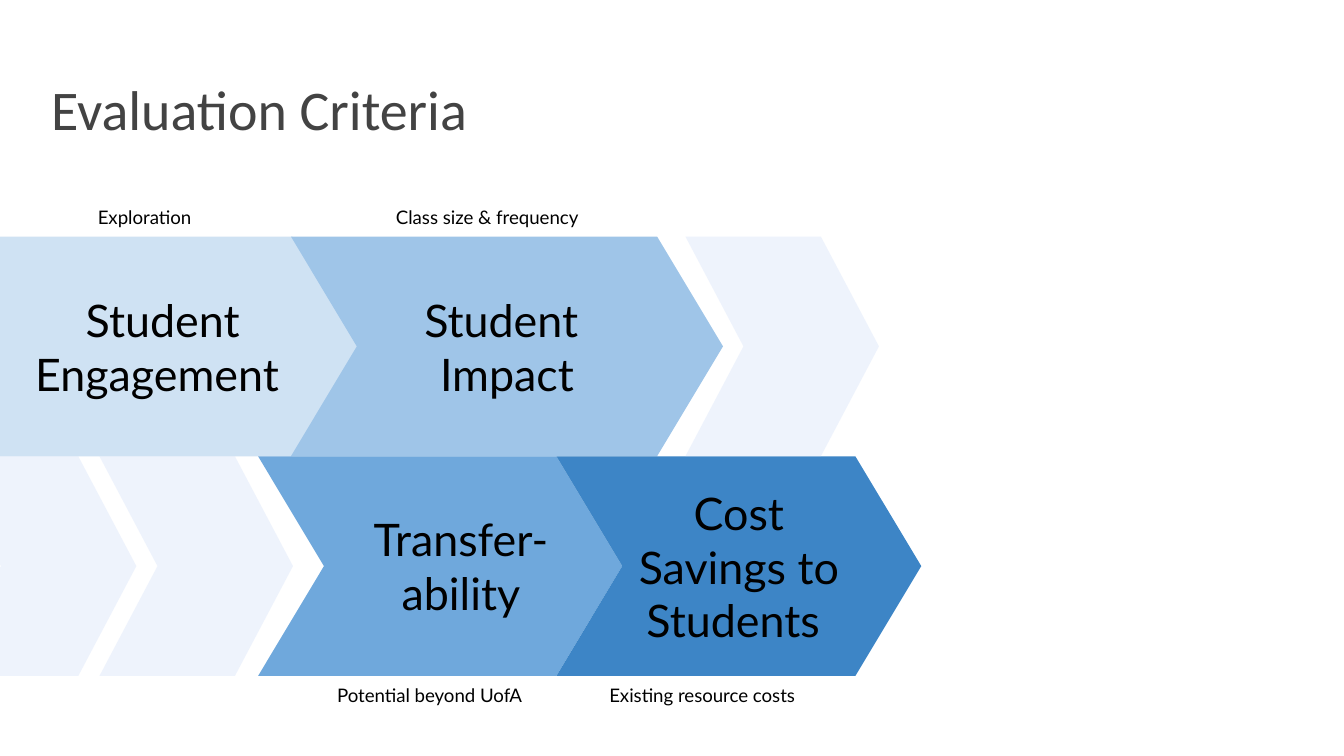
"""Build the evaluation criteria slide with two rows of chevrons."""
from lxml import etree
from pptx import Presentation
from pptx.dml.color import RGBColor
from pptx.enum.shapes import MSO_SHAPE
from pptx.enum.text import MSO_ANCHOR, PP_ALIGN
from pptx.oxml.ns import qn
from pptx.util import Pt

PX = 4572
PENTAGON, CHEVRON = MSO_SHAPE.PENTAGON, MSO_SHAPE.CHEVRON
MIDDLE = MSO_ANCHOR.MIDDLE
LEFT, CENTER = PP_ALIGN.LEFT, PP_ALIGN.CENTER

BLACK = RGBColor(0x00, 0x00, 0x00)
GRAY = RGBColor(0x43, 0x43, 0x43)
PALE = RGBColor(0xCF, 0xE2, 0xF3)
LIGHT = RGBColor(0x9F, 0xC5, 0xE8)
MEDIUM = RGBColor(0x6F, 0xA8, 0xDC)
DEEP = RGBColor(0x3D, 0x85, 0xC6)
GHOST = RGBColor(0xC9, 0xDA, 0xF8)

TOP, HIGH = 352, 327
LOW = TOP + HIGH
NOTE = 152
PAD = 20


def px(*sizes):
    """Turn px lengths into EMU."""
    return [size * PX for size in sizes]


def write(shape, text, size, color=BLACK, font="Lato", align=CENTER,
          inset=PAD, space=None):
    """Fill the text frame of a shape."""
    frame = shape.text_frame
    frame.word_wrap = True
    frame.vertical_anchor = MIDDLE
    frame.margin_left, frame.margin_right = px(inset, PAD)
    frame.margin_top, frame.margin_bottom = px(PAD, PAD)
    frame.text = text
    for para in frame.paragraphs:
        para.alignment = align
        para.line_spacing = space
        para.font.size = Pt(size)
        para.font.name = font
        para.font.color.rgb = color


def add_text(slide, box, text, size, **style):
    """Add a text box."""
    write(slide.shapes.add_textbox(*px(*box)), text, size, **style)


def add_note(slide, left, top, width, text, align):
    """Add a small caption above or below an arrow."""
    add_text(slide, (left, top, width, NOTE), text, 10, align=align, space=1.15)


def add_arrow(slide, left, top, width, color, text="", kind=CHEVRON):
    """Add a flat arrow shape with an optional label."""
    shape = slide.shapes.add_shape(kind, *px(left, top, width, HIGH))
    shape.adjustments[0] = 0.3
    shape.shadow.inherit = False
    shape.fill.solid()
    shape.fill.fore_color.rgb = color
    shape.line.fill.background()
    if text:
        write(shape, text, 24)
    return shape


def add_ghost(slide, left, top):
    """Add a see-through chevron."""
    shape = add_arrow(slide, left, top, 288, GHOST)
    color = next(shape.element.spPr.iter(qn("a:srgbClr")))
    etree.SubElement(color, qn("a:alpha")).set("val", "31000")


def main():
    """Build and save the slide."""
    deck = Presentation()
    deck.slide_width, deck.slide_height = px(2000, 1125)
    slide = deck.slides.add_slide(deck.slide_layouts[6])

    add_text(slide, (18, 53, 1544, 216), "Evaluation Criteria", 30,
             color=GRAY, font="Calibri", align=LEFT, inset=58)

    add_arrow(slide, 0, TOP, 533, PALE, "Student Engagement ", PENTAGON)
    add_arrow(slide, 433, TOP, 643, LIGHT, "Student \nImpact")
    add_arrow(slide, 384, LOW, 542, MEDIUM)
    add_arrow(slide, 828, LOW, 543, DEEP, "Cost Savings to Students ")
    add_text(slide, (482, 712, 408, 260), "Transfer-\vability", 24)

    for note in (
        (472, 244, 506, "Class size & frequency", CENTER),
        (482, 956, 336, "Potential beyond UofA", LEFT),
        (887, 956, 598, "Existing resource costs", LEFT),
        (0, 244, 430, "Exploration", CENTER),
    ):
        add_note(slide, *note)

    for left, top in ((148, LOW), (-85, LOW), (1020, TOP)):
        add_ghost(slide, left, top)

    deck.save("out.pptx")


if __name__ == "__main__":
    main()
